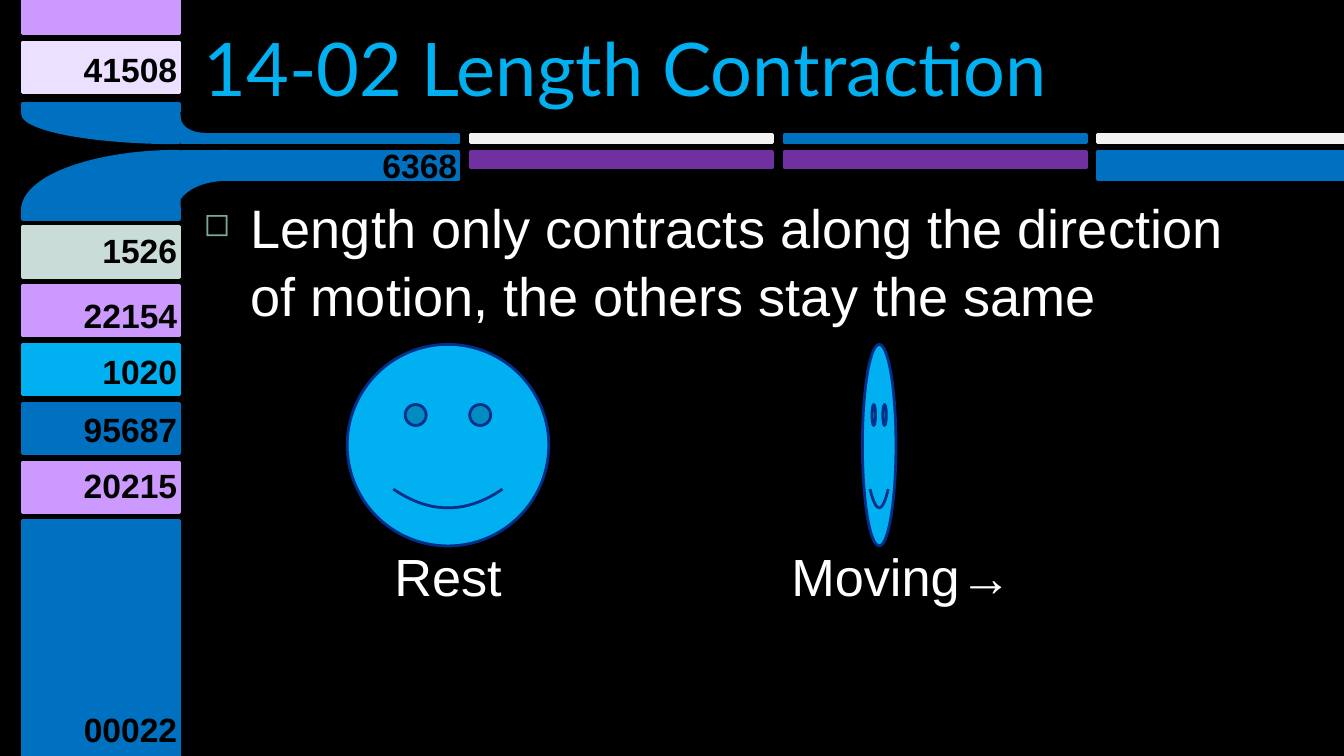
"""Build the length contraction slide."""
from lxml import etree
from pptx import Presentation
from pptx.dml.color import RGBColor
from pptx.enum import shapes, text
from pptx.oxml import ns
from pptx.util import Pt

BLUE, SKY, LILAC, PURPLE = "0070C0", "00B0F0", "CC99FF", "7030A0"
PALE, MINT, LIGHT, NAVY = "EBE0FF", "CADCD8", "F2F2F2", "002E89"
BLACK, WHITE, SAGE = "000000", "FFFFFF", "7BA79D"
KIND = shapes.MSO_SHAPE
ALIGN = text.PP_ALIGN
FIT = text.MSO_AUTO_SIZE


def color(hex_value):
    return RGBColor.from_string(hex_value)


def write(frame, content, size=18, font="Arial", ink=WHITE, bold=False,
          align=ALIGN.LEFT, fit=FIT.NONE, anchor=text.MSO_ANCHOR.TOP):
    frame.word_wrap = True
    frame.auto_size = fit
    frame.vertical_anchor = anchor
    paragraph = frame.paragraphs[0]
    paragraph.alignment = align
    run = paragraph.add_run()
    run.text = content
    run.font.size = Pt(size)
    run.font.name = font
    run.font.bold = bold
    run.font.color.rgb = color(ink)
    return paragraph


class Deck:
    def __init__(self, slide, line_width=1.5):
        self.slide = slide
        self.line_width = line_width
        slide.background.fill.solid()
        slide.background.fill.fore_color.rgb = color(BLACK)

    def title(self, content, box, **style):
        heading = self.slide.shapes.title
        heading.left, heading.top, heading.width, heading.height = map(Pt, box)
        write(heading.text_frame, content, **style)

    def shape(self, kind, box, fill, line=None, adjust=()):
        part = self.slide.shapes.add_shape(kind, *map(Pt, box))
        part.shadow.inherit = False
        part.fill.solid()
        part.fill.fore_color.rgb = color(fill)
        part.line.color.rgb = color(line or fill)
        part.line.width = Pt(self.line_width)
        for index, value in enumerate(adjust):
            part.adjustments[index] = value

    def label(self, content, box, **style):
        frame = self.slide.shapes.add_textbox(*map(Pt, box)).text_frame
        return write(frame, content, **style)

    def bullet(self, content, box, indent, **style):
        paragraph = self.label(content, box, **style)
        paragraph.space_before = Pt(7)
        paragraph.line_spacing = 1.05
        props = paragraph._p.get_or_add_pPr()
        props.set("marL", str(Pt(indent)))
        props.set("indent", str(-Pt(indent)))
        tint = etree.SubElement(props, ns.qn("a:buClr"))
        etree.SubElement(tint, ns.qn("a:srgbClr"), val=SAGE)
        etree.SubElement(props, ns.qn("a:buSzPct"), val="60000")
        etree.SubElement(props, ns.qn("a:buChar"), char="◻")


def draw_frame(deck):
    left, width, height, pitch = 12, 84, 27, 31.5
    for row, fill in enumerate([MINT, LILAC, SKY, BLUE, LILAC]):
        deck.shape(KIND.RECTANGLE, (left, 121.5 + row * pitch, width, height), fill)
    for top, tall, fill in [(279, 126, BLUE), (22.5, height, PALE), (0, 18, LILAC)]:
        deck.shape(KIND.RECTANGLE, (left, top, width, tall), fill)

    curves = [
        (KIND.BLOCK_ARC, (79, 81, 85, 63), (108, 162.97, 0.24)),
        (KIND.PIE, (left, 81, 168, 63), (108, 162)),
        (KIND.BLOCK_ARC, (91.5, 49.5, 36, 27), (53.24, 108, 0.17)),
        (KIND.PIE, (left, 45, 168, 31.5), (54, 108)),
    ]
    for kind, box, adjust in curves:
        deck.shape(kind, box, BLUE, adjust=adjust)
    for box in [(97, 81, 149, 15), (left, 111, width, 6.5),
                (97, 72, 149, 4.5), (left, 55.5, width, 4.5)]:
        deck.shape(KIND.RECTANGLE, box, BLUE)

    stripes = [(162, LIGHT, PURPLE, 9), (162, BLUE, PURPLE, 9), (132, LIGHT, BLUE, 15)]
    for column, (wide, upper, lower, tall) in enumerate(stripes):
        x = 252 + column * 168
        deck.shape(KIND.RECTANGLE, (x, 72, wide, 4.5), upper)
        deck.shape(KIND.RECTANGLE, (x, 81, wide, tall), lower)

    numbers = [("41508", 36, 22.5, 66), ("6368", 186, 74, 66), ("1526", 36, 119.5, 66),
               ("22154", 36, 154.5, 66), ("1020", 36, 184.5, 66), ("95687", 36, 215.5, 66),
               ("20215", 36, 245.5, 66), ("00022", 24, 376.5, 78)]
    for number, x, top, wide in numbers:
        deck.label(number, (x, top, wide, 29), ink=BLACK, bold=True,
                   align=ALIGN.RIGHT, fit=FIT.SHAPE_TO_FIT_TEXT)


def main():
    presentation = Presentation()
    presentation.slide_width, presentation.slide_height = Pt(720), Pt(405)
    deck = Deck(presentation.slides.add_slide(presentation.slide_layouts[5]))
    draw_frame(deck)
    deck.title("14-02 Length Contraction", (102, 13.5, 588, 45), size=39.6,
               font="Lato", ink=SKY, anchor=text.MSO_ANCHOR.MIDDLE)
    deck.bullet("Length only contracts along the direction of motion, the others stay the same",
                (102, 99, 588, 261), indent=25.2, size=29)
    faces = [("Rest", 186, 108, 174, 132), ("Moving→", 462, 18, 408, 150)]
    for caption, x, wide, caption_x, caption_width in faces:
        deck.shape(KIND.SMILEY_FACE, (x, 184.5, wide, 108), SKY, NAVY, (0.05,))
        deck.label(caption, (caption_x, 288, caption_width, 41), size=28,
                   align=ALIGN.CENTER, fit=FIT.SHAPE_TO_FIT_TEXT)
    presentation.save("out.pptx")


if __name__ == "__main__":
    main()
